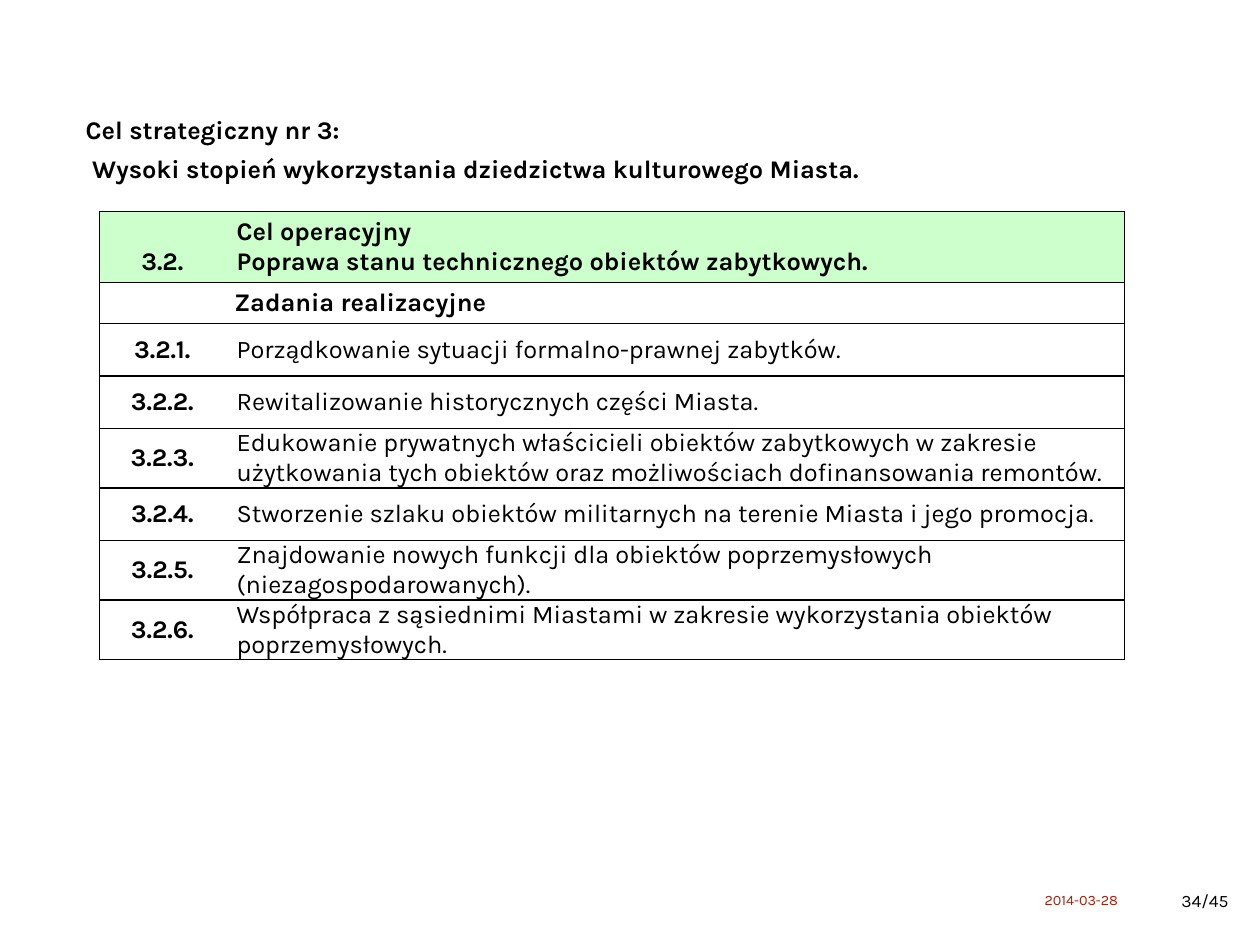
"""Build the slide on strategic goal 3 with its table of operational tasks."""
from copy import deepcopy
from dataclasses import dataclass

from lxml import etree
from pptx import Presentation
from pptx.dml.color import RGBColor
from pptx.enum.text import MSO_ANCHOR, MSO_AUTO_SIZE, PP_ALIGN
from pptx.oxml.ns import qn
from pptx.util import Pt

EMU_PER_PX = 9144
SLIDE_WIDTH, SLIDE_HEIGHT = 10080625, 7559675
FONT = "Karla"
BLACK, RED, GREEN = "000000", "A31F09", "CCFFCC"
LEFT, CENTER, RIGHT = PP_ALIGN.LEFT, PP_ALIGN.CENTER, PP_ALIGN.RIGHT
TOP, MIDDLE, BOTTOM = MSO_ANCHOR.TOP, MSO_ANCHOR.MIDDLE, MSO_ANCHOR.BOTTOM
NO_AUTOFIT = MSO_AUTO_SIZE.NONE
TITLE_ONLY = 5
PLAIN_TABLE = "{2D5ABB26-0587-4C30-8999-92F81FD0307C}"
COLUMN_WIDTHS = (110, 787)
TITLE = "Cel strategiczny nr 3:\n Wysoki stopień wykorzystania dziedzictwa kulturowego Miasta."


@dataclass(frozen=True)
class Box:
    """Place and insets of a text frame, in px."""
    left: int
    top: int
    width: int
    height: int
    inset_x: int = 0
    inset_y: int = 0


@dataclass(frozen=True)
class Label:
    """A small line of text at the foot of the slide."""
    text: str
    box: Box
    size: int
    color: str
    align: PP_ALIGN
    anchor: MSO_ANCHOR


@dataclass(frozen=True)
class Task:
    """A numbered row of the table."""
    number: str
    text: str
    height: int


LABELS = (
    Label("34/45", Box(1018, 773, 68, 40, 11, 6), 11, BLACK, RIGHT, TOP),
    Label("2014-03-28", Box(914, 774, 95, 26), 9, RED, LEFT, MIDDLE),
)
GOAL = Task("3.2.", "Cel operacyjny\nPoprawa stanu technicznego obiektów zabytkowych.", 62)
HEADING = Task("", "Zadania realizacyjne", 36)
TASKS = (
    Task("3.2.1.", "Porządkowanie sytuacji formalno-prawnej zabytków.", 46),
    Task("3.2.2.", "Rewitalizowanie historycznych części Miasta.", 46),
    Task("3.2.3.", "Edukowanie prywatnych właścicieli obiektów zabytkowych w zakresie "
         "użytkowania tych obiektów oraz możliwościach dofinansowania remontów.", 52),
    Task("3.2.4.", "Stworzenie szlaku obiektów militarnych na terenie Miasta i jego promocja.", 46),
    Task("3.2.5.", "Znajdowanie nowych funkcji dla obiektów poprzemysłowych "
         "(niezagospodarowanych).", 52),
    Task("3.2.6.", "Współpraca z sąsiednimi Miastami w zakresie wykorzystania obiektów "
         "poprzemysłowych.", 52),
)


def px(value: int) -> int:
    """Turn px into EMU."""
    return value * EMU_PER_PX


def rgb(color: str) -> RGBColor:
    """Turn a hex string into a colour."""
    return RGBColor.from_string(color)


def write(tf, text: str, size: int = 16, bold: bool = True,
          color: str = BLACK, align: PP_ALIGN = LEFT):
    """Write text run by run into the first paragraph and return it."""
    p = tf.paragraphs[0]
    p.alignment = align
    for i, line in enumerate(text.split("\n")):
        if i:
            p.add_line_break()
            p._p[-1].append(deepcopy(r._r.rPr))
        r = p.add_run()
        r.text = line
        r.font.name = FONT
        r.font.size = Pt(size)
        r.font.bold = bold
        r.font.color.rgb = rgb(color)
    return p


def place(sp, box: Box, anchor: MSO_ANCHOR):
    """Set a shape's place and insets and return its text frame."""
    sp.left, sp.top, sp.width, sp.height = map(px, (box.left, box.top, box.width, box.height))
    tf = sp.text_frame
    tf.word_wrap = True
    tf.auto_size = NO_AUTOFIT
    tf.vertical_anchor = anchor
    tf.margin_left = tf.margin_right = px(box.inset_x)
    tf.margin_top = tf.margin_bottom = px(box.inset_y)
    return tf


def draw_label(s, label: Label) -> None:
    """Draw one label at the foot of the slide."""
    sp = s.shapes.add_textbox(0, 0, 0, 0)
    tf = place(sp, label.box, label.anchor)
    write(tf, label.text, label.size, False, label.color, label.align)


def style_cell(cell, sides: str, anchor: MSO_ANCHOR, inset_y: int = 5, fill: str = "") -> None:
    """Set a cell's borders, anchor, insets and fill."""
    tc_pr = cell._tc.get_or_add_tcPr()
    for side in sides:
        ln = etree.SubElement(tc_pr, qn(f"a:ln{side}"), w=str(Pt(1)))
        solid = etree.SubElement(ln, qn("a:solidFill"))
        etree.SubElement(solid, qn("a:srgbClr"), val=BLACK)
    cell.vertical_anchor = anchor
    cell.margin_left = cell.margin_right = px(10)
    cell.margin_top = cell.margin_bottom = px(inset_y)
    if fill:
        cell.fill.solid()
        cell.fill.fore_color.rgb = rgb(fill)
    else:
        cell.fill.background()


def draw_table(s) -> None:
    """Draw the goal, the heading and the numbered tasks."""
    rows = (GOAL, HEADING, *TASKS)
    frame = s.shapes.add_table(len(rows), 2, px(87), px(185), px(sum(COLUMN_WIDTHS)),
                               px(sum(row.height for row in rows)))
    table = frame.table
    table.first_row = table.horz_banding = False
    table._tbl.tblPr.find(qn("a:tableStyleId")).text = PLAIN_TABLE
    for column, width in zip(table.columns, COLUMN_WIDTHS):
        column.width = px(width)
    for i, row in enumerate(rows):
        table.rows[i].height = px(row.height)
        number, text = table.cell(i, 0), table.cell(i, 1)
        if row is HEADING:
            number.merge(text)
            style_cell(number, "LRTB", TOP)
            style_cell(text, "RTB", TOP)
            p = write(number.text_frame, row.text)
            p._p.get_or_add_pPr().set("marL", str(px(108)))
            continue
        is_goal = row is GOAL
        anchor, fill = (BOTTOM, GREEN) if is_goal else (MIDDLE, "")
        style_cell(number, "LTB", anchor, fill=fill)
        style_cell(text, "RTB", anchor, 5 if is_goal else 0, fill)
        write(number.text_frame, row.number, align=CENTER)
        write(text.text_frame, row.text, bold=is_goal)


def main() -> None:
    """Build and save the slide."""
    prs = Presentation()
    prs.slide_width, prs.slide_height = SLIDE_WIDTH, SLIDE_HEIGHT
    s = prs.slides.add_slide(prs.slide_layouts[TITLE_ONLY])
    tf = place(s.shapes.title, Box(75, 62, 973, 99), BOTTOM)
    write(tf, TITLE).line_spacing = 1.3
    for label in LABELS:
        draw_label(s, label)
    draw_table(s)
    prs.save("out.pptx")


if __name__ == "__main__":
    main()
